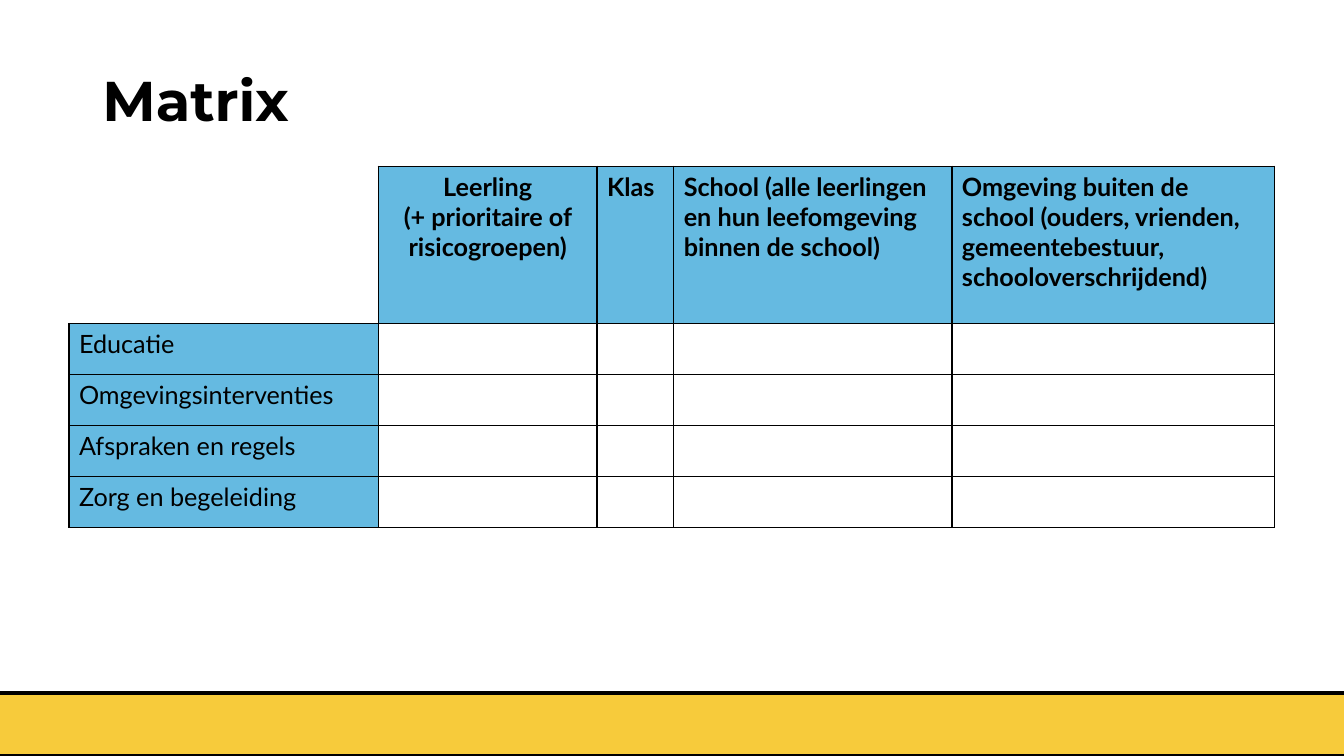
from lxml import etree
from pptx import Presentation
from pptx import util as u
from pptx.dml.color import RGBColor
from pptx.enum import shapes, text
from pptx.oxml.ns import qn

COLORS = {"ink": "000000", "blue": "65BAE1", "yellow": "F7CB3B"}
HEADERS = [
    "",
    "Leerling\n(+ prioritaire of risicogroepen)",
    "Klas",
    "School (alle leerlingen en hun leefomgeving binnen de school)",
    "Omgeving buiten de school (ouders, vrienden, gemeentebestuur, schooloverschrijdend)",
]
MEASURES = ["Educatie", "Omgevingsinterventies", "Afspraken en regels", "Zorg en begeleiding"]
COLUMN_WIDTHS = [221, 156.25, 54.75, 198.75, 230.25]
HEADER_HEIGHT, MEASURE_HEIGHT = 112.25, 36.5


class MatrixSlide:
    title_font = "Montserrat"
    body_font = "Lato"

    def __init__(self, presentation):
        self.slide = presentation.slides.add_slide(presentation.slide_layouts[5])

    def color(self, name):
        return RGBColor.from_string(COLORS[name])

    def style(self, paragraph, font_name, size, bold):
        font = paragraph.font
        font.name, font.size, font.bold = font_name, u.Pt(size), bold
        font.color.rgb = self.color("ink")

    def band(self, left, top, width, height):
        box = [u.Pt(length) for length in (left, top, width, height)]
        shape = self.slide.shapes.add_shape(shapes.MSO_SHAPE.RECTANGLE, *box)
        shape.shadow.inherit = False
        shape.fill.solid()
        shape.fill.fore_color.rgb = self.color("yellow")
        shape.line.color.rgb = self.color("ink")
        shape.line.width = u.Pt(3)

    def title(self, words, left, top, width, height):
        title = self.slide.shapes.title
        title.left, title.top = u.Pt(left), u.Pt(top)
        title.width, title.height = u.Pt(width), u.Pt(height)
        frame = title.text_frame
        frame.text = words
        frame.auto_size = text.MSO_AUTO_SIZE.NONE
        frame.vertical_anchor = text.MSO_ANCHOR.MIDDLE
        paragraph = frame.paragraphs[0]
        paragraph.alignment = text.PP_ALIGN.LEFT
        paragraph.line_spacing = 0.9
        self.style(paragraph, self.title_font, 40, True)

    def borders(self, cell, visible_sides):
        properties = cell._tc.get_or_add_tcPr()
        for side in "LRTB":
            line = etree.SubElement(properties, qn(f"a:ln{side}"), w=str(u.Pt(1)))
            if side in visible_sides:
                fill = etree.SubElement(line, qn("a:solidFill"))
                etree.SubElement(fill, qn("a:srgbClr"), val=COLORS["ink"])
            else:
                etree.SubElement(line, qn("a:noFill"))

    def cell(self, cell, words, bold, is_corner):
        self.borders(cell, "RB" if is_corner else "LRTB")
        cell.text = words
        if words:
            cell.fill.solid()
            cell.fill.fore_color.rgb = self.color("blue")
        else:
            cell.fill.background()
        for paragraph in cell.text_frame.paragraphs:
            self.style(paragraph, self.body_font, 18, bold)

    def matrix(self, left, top, rows, widths, heights):
        frame = self.slide.shapes.add_table(
            len(rows), len(widths), u.Pt(left), u.Pt(top), u.Pt(sum(widths)), u.Pt(sum(heights))
        )
        table = frame.table
        table.first_row = table.horz_banding = False
        for column, width in zip(table.columns, widths):
            column.width = u.Pt(width)
        for row, height in zip(table.rows, heights):
            row.height = u.Pt(height)
        for r, row in enumerate(rows):
            for c, words in enumerate(row):
                self.cell(table.cell(r, c), words, r == 0, r == c == 0)
        return table


def main():
    presentation = Presentation()
    presentation.slide_width, presentation.slide_height = u.Pt(960), u.Pt(540)
    page = MatrixSlide(presentation)
    page.band(-26.5, 495.25, 1013, 44.75)
    page.title("Matrix", 66, 28.75, 828, 90)
    rows = [HEADERS] + [[measure] + [""] * (len(HEADERS) - 1) for measure in MEASURES]
    heights = [HEADER_HEIGHT] + [MEASURE_HEIGHT] * len(MEASURES)
    table = page.matrix(49.25, 118.75, rows, COLUMN_WIDTHS, heights)
    for paragraph in table.cell(0, 1).text_frame.paragraphs:
        paragraph.alignment = text.PP_ALIGN.CENTER
    presentation.save("out.pptx")


if __name__ == "__main__":
    main()
